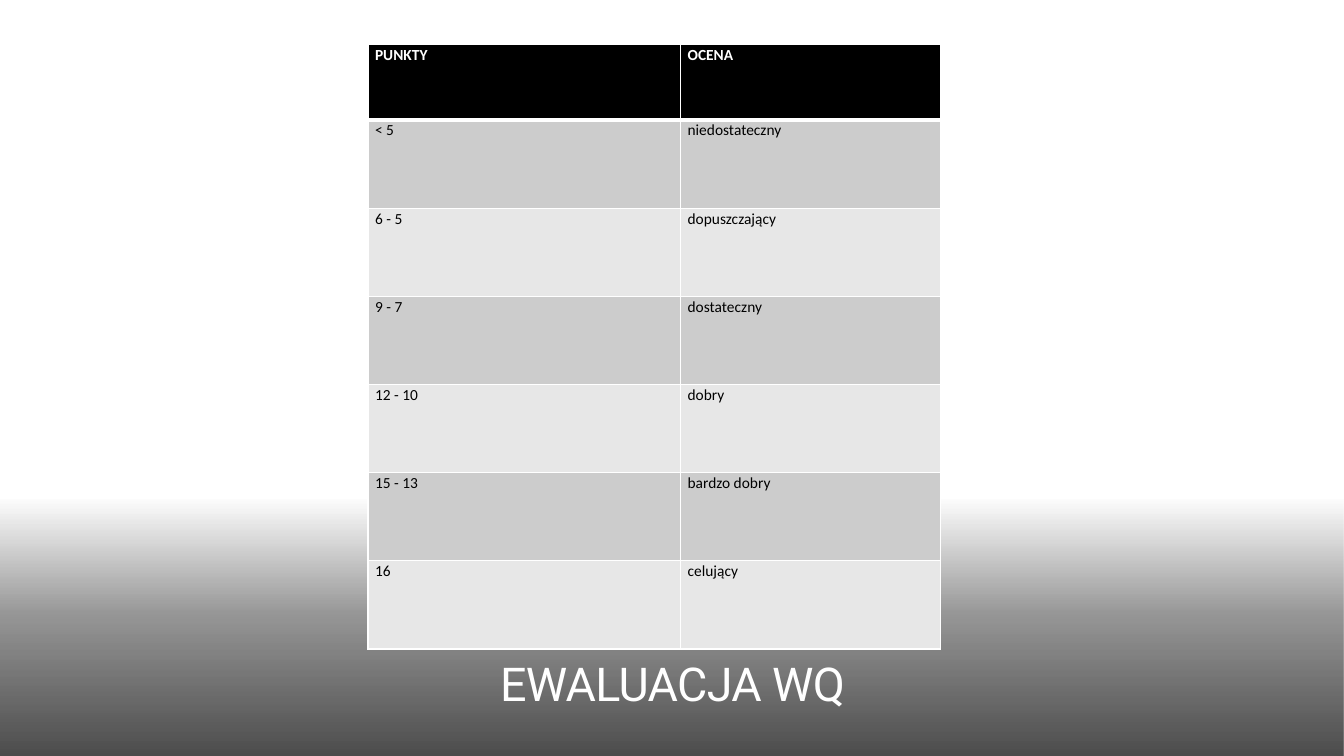
"""Build the grading-scale slide: a points table over a fading dark band."""
import lxml.etree
import pptx
import pptx.dml.color
import pptx.enum.text
import pptx.oxml.ns
import pptx.util

Inches, Pt = pptx.util.Inches, pptx.util.Pt
qn = pptx.oxml.ns.qn

TITLE = "EWALUACJA WQ"
GRADES = [
    ("PUNKTY", "OCENA"),
    ("< 5", "niedostateczny"),
    ("6 - 5", "dopuszczający"),
    ("9 - 7", "dostateczny"),
    ("12 - 10", "dobry"),
    ("15 - 13", "bardzo dobry"),
    ("16", "celujący"),
]
THEME = {
    "white": "FFFFFF", "black": "000000", "bands": ("CCCCCC", "E7E7E7"),
    "title_font": "Roboto", "title_size": 33.3,
    "table_font": "Calibri", "table_size": 11,
    "rule": 1, "header_rule": 3,
}
FADE = [(0, 0), (44, 40), (100, 70)]
SLIDE_SIZE = (13.33, 7.5)
BAND_TOP = 4.95
TITLE_BOX = (1.67, 4.83, 10, 2.27)
TABLE_BOX = (3.65, 0.44, 5.68, 6)
COLUMNS = (3.1, 2.58)
HEADER_HEIGHT = 0.75


def rgb(color):
    """Return a colour object for a hex string."""
    return pptx.dml.color.RGBColor.from_string(color)


def write(frame, text, *, font, size, color, bold=False, align=None,
          line=1.0, after=0, tracking=None):
    """Put one formatted paragraph in a text frame."""
    frame.word_wrap = True
    paragraph = frame.paragraphs[0]
    paragraph.alignment = align
    paragraph.line_spacing = line
    paragraph.space_after = Pt(after)
    run = paragraph.add_run()
    run.text = text
    run.font.name, run.font.size, run.font.bold = font, Pt(size), bold
    run.font.color.rgb = rgb(color)
    if tracking is not None:
        run.font._element.set("spc", str(round(tracking * 100)))


def add_fading_band(slide):
    """Draw the band that darkens towards the foot of the slide."""
    width, height = SLIDE_SIZE
    band = slide.shapes.add_shape(
        pptx.enum.shapes.MSO_SHAPE.RECTANGLE, 0, Inches(BAND_TOP),
        Inches(width), Inches(height - BAND_TOP))
    band.shadow.inherit = False
    band.line.fill.background()
    band.fill.gradient()
    band.fill.gradient_angle = 270
    stops = band._element.spPr.find(".//" + qn("a:gsLst"))
    for stop in list(stops):
        stops.remove(stop)
    for position, opacity in FADE:
        stop = lxml.etree.SubElement(stops, qn("a:gs"), pos=str(position * 1000))
        color = lxml.etree.SubElement(stop, qn("a:srgbClr"), val=THEME["black"])
        lxml.etree.SubElement(color, qn("a:alpha"), val=str(opacity * 1000))


def set_borders(cell, top, bottom):
    """Give a cell white borders, with its own top and bottom widths."""
    properties = cell._tc.get_or_add_tcPr()
    widths = {"L": THEME["rule"], "R": THEME["rule"], "T": top, "B": bottom}
    for index, (side, width) in enumerate(widths.items()):
        border = lxml.etree.Element(qn("a:ln" + side), w=str(Pt(width)))
        fill = lxml.etree.SubElement(border, qn("a:solidFill"))
        lxml.etree.SubElement(fill, qn("a:srgbClr"), val=THEME["white"])
        properties.insert(index, border)


def add_grades(slide):
    """Add the table of points and grades."""
    grades = slide.shapes.add_table(
        len(GRADES), len(COLUMNS), *map(Inches, TABLE_BOX)).table
    for column, width in zip(grades.columns, COLUMNS):
        column.width = Inches(width)
    body_height = (TABLE_BOX[3] - HEADER_HEIGHT) / (len(GRADES) - 1)
    for r, entries in enumerate(GRADES):
        header = r == 0
        grades.rows[r].height = Inches(HEADER_HEIGHT if header else body_height)
        top = THEME["header_rule" if r == 1 else "rule"]
        bottom = THEME["header_rule" if header else "rule"]
        for c, entry in enumerate(entries):
            cell = grades.cell(r, c)
            cell.margin_left = cell.margin_right = Inches(0.07)
            cell.margin_top = cell.margin_bottom = 0
            cell.fill.solid()
            cell.fill.fore_color.rgb = rgb(
                THEME["black"] if header else THEME["bands"][(r - 1) % 2])
            set_borders(cell, top, bottom)
            write(cell.text_frame, entry, font=THEME["table_font"],
                  size=THEME["table_size"], bold=header, line=1.06, after=8,
                  color=THEME["white" if header else "black"])


def add_title(slide):
    """Add the title at the foot of the slide."""
    frame = slide.shapes.add_textbox(*map(Inches, TITLE_BOX)).text_frame
    frame.vertical_anchor = pptx.enum.text.MSO_ANCHOR.BOTTOM
    write(frame, TITLE, font=THEME["title_font"], size=THEME["title_size"],
          color=THEME["white"], align=pptx.enum.text.PP_ALIGN.CENTER,
          line=0.85, tracking=-0.5)


def main():
    """Assemble and save the slide."""
    deck = pptx.Presentation()
    deck.slide_width, deck.slide_height = map(Inches, SLIDE_SIZE)
    slide = deck.slides.add_slide(deck.slide_layouts[6])
    slide.background.fill.solid()
    slide.background.fill.fore_color.rgb = rgb(THEME["white"])
    add_fading_band(slide)
    add_title(slide)
    add_grades(slide)
    deck.save("out.pptx")


if __name__ == "__main__":
    main()
